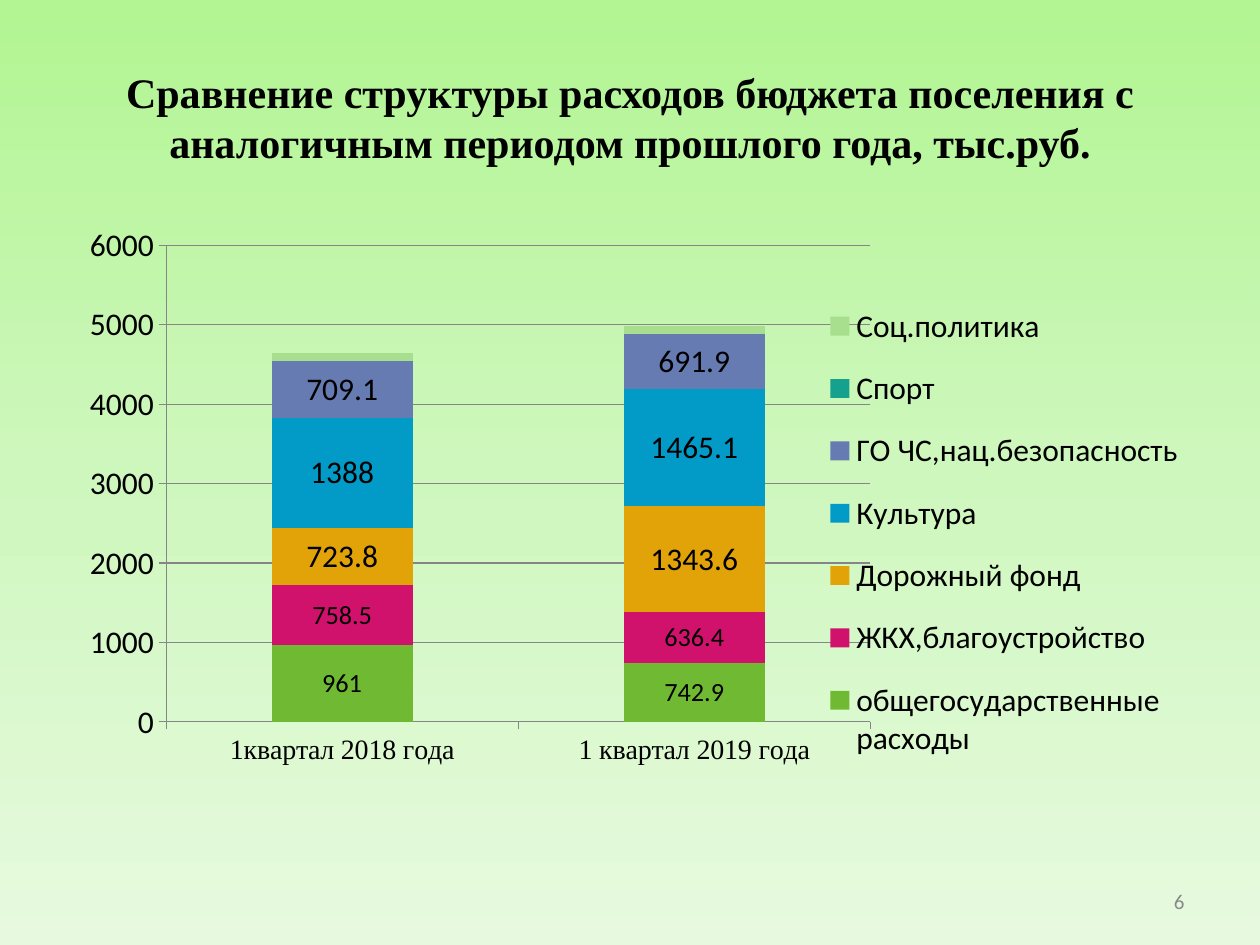
from copy import deepcopy

from lxml import etree
from pptx import Presentation
from pptx.chart.data import CategoryChartData
from pptx.dml.color import RGBColor
from pptx.enum.chart import XL_CHART_TYPE, XL_LABEL_POSITION, XL_LEGEND_POSITION, XL_TICK_MARK
from pptx.enum.text import MSO_ANCHOR, PP_ALIGN
from pptx.oxml.ns import qn
from pptx.util import Pt

STACKED = XL_CHART_TYPE.COLUMN_STACKED
CENTER_LABEL = XL_LABEL_POSITION.CENTER
LEGEND_RIGHT = XL_LEGEND_POSITION.RIGHT
OUTSIDE = XL_TICK_MARK.OUTSIDE
MIDDLE = MSO_ANCHOR.MIDDLE
CENTER, RIGHT = PP_ALIGN.CENTER, PP_ALIGN.RIGHT

BLACK = RGBColor(0x00, 0x00, 0x00)
GRAY = RGBColor(0x89, 0x89, 0x89)
AXIS_GRAY = RGBColor(0x86, 0x86, 0x86)
GREEN = RGBColor(0x70, 0xBA, 0x33)
PINK = RGBColor(0xD1, 0x12, 0x6D)
ORANGE = RGBColor(0xE1, 0xA3, 0x08)
BLUE = RGBColor(0x02, 0x9A, 0xC6)
INDIGO = RGBColor(0x66, 0x7B, 0xB2)
TEAL = RGBColor(0x16, 0xA0, 0x8E)
LIGHT_GREEN = RGBColor(0xA8, 0xDF, 0x8E)
BACKGROUND = [
    (0, RGBColor(0xB2, 0xF5, 0x92)),
    (0.5, RGBColor(0xCE, 0xF7, 0xBD)),
    (1, RGBColor(0xE7, 0xFA, 0xDF)),
]

SERIF, SANS = "Times New Roman", "Calibri"
TITLE = "Сравнение структуры расходов бюджета поселения с аналогичным периодом прошлого года, тыс.руб."
PAGE_NUMBER = "6"
CATEGORIES = ["1квартал 2018 года", "1 квартал 2019 года"]
SERIES = [
    ("общегосударственные расходы", (961, 742.9), GREEN, 15),
    ("ЖКХ,благоустройство", (758.5, 636.4), PINK, 15),
    ("Дорожный фонд", (723.8, 1343.6), ORANGE, 18),
    ("Культура", (1388, 1465.1), BLUE, 18),
    ("ГО ЧС,нац.безопасность", (709.1, 691.9), INDIGO, 18),
    ("Спорт", (0, 0), TEAL, None),
    ("Соц.политика", (100, 100), LIGHT_GREEN, None),
]
PLOT_LAYOUT = {"layoutTarget": "inner", "xMode": "edge", "yMode": "edge",
               "x": 0.091, "y": 0.04, "w": 0.621, "h": 0.764}
LEGEND_LAYOUT = {"xMode": "edge", "yMode": "edge", "x": 0.67, "y": 0.1, "w": 0.32, "h": 0.8}


def style_font(font, name, size, color, bold=False):
    font.name, font.size, font.bold = name, Pt(size), bold
    font.color.rgb = color


def add_text(slide, text, box, align, *font_style):
    shape = slide.shapes.add_textbox(*map(Pt, box))
    frame = shape.text_frame
    frame.word_wrap = True
    frame.vertical_anchor = MIDDLE
    paragraph = frame.paragraphs[0]
    paragraph.text = text
    paragraph.alignment = align
    style_font(paragraph.font, *font_style)


def fill_background(slide):
    fill = slide.background.fill
    fill.gradient()
    fill.gradient_angle = 270
    stop_list = next(slide.element.iter(qn("a:gsLst")))
    stop_list.insert(1, deepcopy(stop_list[0]))
    for stop, (position, color) in zip(fill.gradient_stops, BACKGROUND):
        stop.position = position
        stop.color.rgb = color


def set_layout(parent, values, index):
    for old in parent.findall(qn("c:layout")):
        parent.remove(old)
    layout = etree.Element(qn("c:layout"))
    manual = etree.SubElement(layout, qn("c:manualLayout"))
    for name, value in values.items():
        etree.SubElement(manual, qn(f"c:{name}")).set("val", str(value))
    parent.insert(index, layout)


def add_spending_chart(slide):
    data = CategoryChartData()
    data.categories = CATEGORIES
    for name, values, _, _ in SERIES:
        data.add_series(name, values)
    chart = slide.shapes.add_chart(STACKED, Pt(36), Pt(126), Pt(648), Pt(356.4), data).chart
    chart.has_title = False
    style_font(chart.font, SANS, 18, BLACK)

    plot = chart.plots[0]
    plot.overlap, plot.gap_width = 100, 150
    for series, (_, _, color, label_size) in zip(plot.series, SERIES):
        series.format.fill.solid()
        series.format.fill.fore_color.rgb = color
        if label_size:
            labels = series.data_labels
            labels.show_value = True
            labels.position = CENTER_LABEL
            style_font(labels.font, SANS, label_size, BLACK)

    category_axis, value_axis = chart.category_axis, chart.value_axis
    style_font(category_axis.tick_labels.font, SERIF, 16, BLACK)
    value_axis.minimum_scale, value_axis.maximum_scale, value_axis.major_unit = 0, 6000, 1000
    value_axis.has_major_gridlines = True
    for axis in (category_axis, value_axis):
        axis.major_tick_mark = OUTSIDE
    for line in (category_axis.format.line, value_axis.format.line, value_axis.major_gridlines.format.line):
        line.color.rgb = AXIS_GRAY
        line.width = Pt(0.75)

    chart.has_legend = True
    legend = chart.legend
    legend.position = LEGEND_RIGHT
    legend.include_in_layout = False
    style_font(legend.font, SANS, 18, BLACK)
    chart_space = category_axis._element.getroottree().getroot()
    set_layout(next(chart_space.iter(qn("c:plotArea"))), PLOT_LAYOUT, 0)
    set_layout(next(chart_space.iter(qn("c:legend"))), LEGEND_LAYOUT, 1)


def main():
    presentation = Presentation()
    presentation.slide_width, presentation.slide_height = Pt(720), Pt(540)
    slide = presentation.slides.add_slide(presentation.slide_layouts[6])
    fill_background(slide)
    add_text(slide, TITLE, (36, 21.6, 648, 90), CENTER, SERIF, 24, BLACK, True)
    add_spending_chart(slide)
    add_text(slide, PAGE_NUMBER, (516, 500.5, 168, 28.75), RIGHT, SANS, 12, GRAY)
    presentation.save("out.pptx")


if __name__ == "__main__":
    main()
